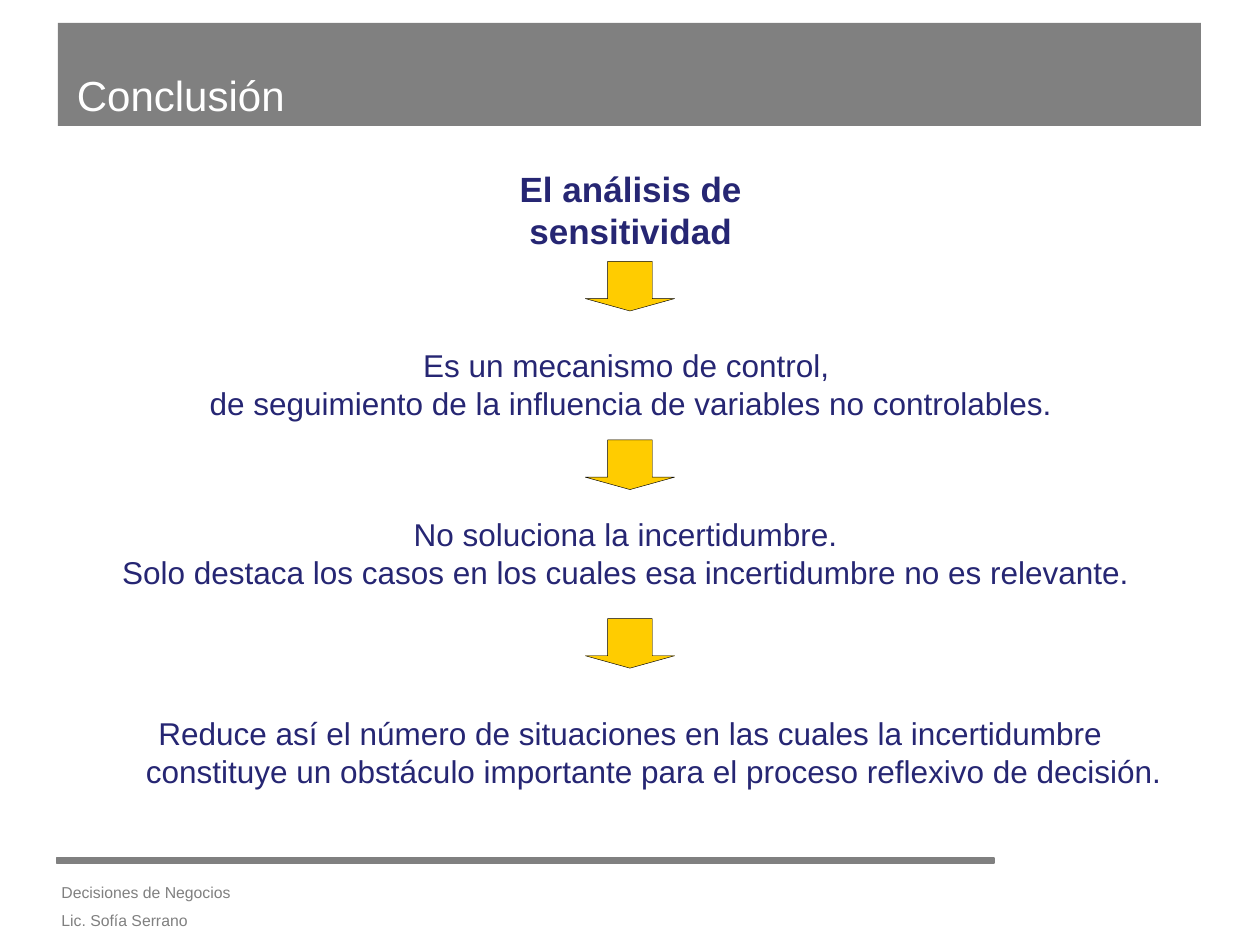
from dataclasses import dataclass

from pptx import Presentation
from pptx.dml.color import RGBColor
from pptx.enum.shapes import MSO_SHAPE
from pptx.enum.text import MSO_ANCHOR, PP_ALIGN
from pptx.util import Cm, Pt


@dataclass(frozen=True)
class Theme:
    font: str = "Arial"
    gray: str = "808080"
    white: str = "FFFFFF"
    navy: str = "262673"
    gold: str = "FFCC00"
    black: str = "000000"
    title_size: int = 24
    heading_size: int = 20
    body_size: int = 18
    footer_size: int = 9


class SlideBuilder:
    def __init__(self, slide, theme):
        self.slide = slide
        self.theme = theme

    def shape(self, kind, box, fill, line=None, line_width=0.75):
        shape = self.slide.shapes.add_shape(kind, *map(Cm, box))
        shape.shadow.inherit = False
        shape.fill.solid()
        shape.fill.fore_color.rgb = RGBColor.from_string(fill)
        if line:
            shape.line.color.rgb = RGBColor.from_string(line)
            shape.line.width = Pt(line_width)
        else:
            shape.line.fill.background()
        return shape

    def bar(self, box, line=None):
        return self.shape(MSO_SHAPE.RECTANGLE, box, self.theme.gray, line)

    def down_arrow(self, box):
        arrow = self.shape(MSO_SHAPE.DOWN_ARROW, box, self.theme.gold, self.theme.black, 0.25)
        arrow.adjustments[0] = 0.5
        arrow.adjustments[1] = 0.25
        return arrow

    def text(self, box, lines, size, color, align=PP_ALIGN.LEFT, anchor=MSO_ANCHOR.TOP,
             bold=False, wrap=True, spacing=None, hanging=None):
        frame = self.slide.shapes.add_textbox(*map(Cm, box)).text_frame
        frame.word_wrap = wrap
        frame.vertical_anchor = anchor
        for index, line in enumerate(lines):
            paragraph = frame.add_paragraph() if index else frame.paragraphs[0]
            paragraph.alignment = align
            if spacing:
                paragraph.line_spacing = spacing
            if hanging:
                properties = paragraph._p.get_or_add_pPr()
                properties.set("marL", str(Cm(hanging)))
                properties.set("indent", str(-Cm(hanging)))
            run = paragraph.add_run()
            run.text = line
            run.font.name = self.theme.font
            run.font.size = Pt(size)
            run.font.bold = bold
            run.font.color.rgb = RGBColor.from_string(color)

    def statement(self, box, lines, wrap=True):
        self.text(box, lines, self.theme.body_size, self.theme.navy,
                  align=PP_ALIGN.CENTER, wrap=wrap, hanging=0.95)


def main():
    presentation = Presentation()
    presentation.slide_width = Cm(25.4)
    presentation.slide_height = Cm(19.05)
    theme = Theme()
    conclusion = SlideBuilder(presentation.slides.add_slide(presentation.slide_layouts[6]), theme)

    conclusion.bar((1.17, 0.46, 23.04, 2.08))
    conclusion.bar((1.14, 17.3, 18.9, 0.1), line=theme.gray)
    conclusion.text((0.99, 17.48, 7.75, 1.4), ["Decisiones de Negocios", "Lic. Sofía Serrano"],
                    theme.footer_size, theme.gray, spacing=1.5)
    conclusion.text((1.3, 1.19, 22.91, 1.42), ["Conclusión"],
                    theme.title_size, theme.white, anchor=MSO_ANCHOR.MIDDLE)

    first_arrow_top, arrow_pitch = 5.27, 3.6
    for step in range(3):
        conclusion.down_arrow((11.8, first_arrow_top + step * arrow_pitch, 1.8, 1))

    conclusion.text((8.69, 3.58, 8.05, 1.27), ["El análisis de sensitividad"],
                    theme.heading_size, theme.navy, align=PP_ALIGN.CENTER,
                    anchor=MSO_ANCHOR.MIDDLE, bold=True, wrap=False)
    conclusion.statement((3.89, 6.86, 17.65, 1.8),
                         ["Es un mecanismo de control, ",
                          "de seguimiento de la influencia de variables no controlables."],
                         wrap=False)
    conclusion.statement((2.21, 10.26, 20.98, 2.57),
                         ["No soluciona la incertidumbre. ",
                          "Solo destaca los casos en los cuales esa incertidumbre no es relevante. "])
    conclusion.statement((1.73, 14.27, 21.95, 2.54),
                         ["Reduce así el número de situaciones en las cuales la incertidumbre "
                          "constituye un obstáculo importante para el proceso reflexivo de decisión."])

    presentation.save("out.pptx")


if __name__ == "__main__":
    main()
